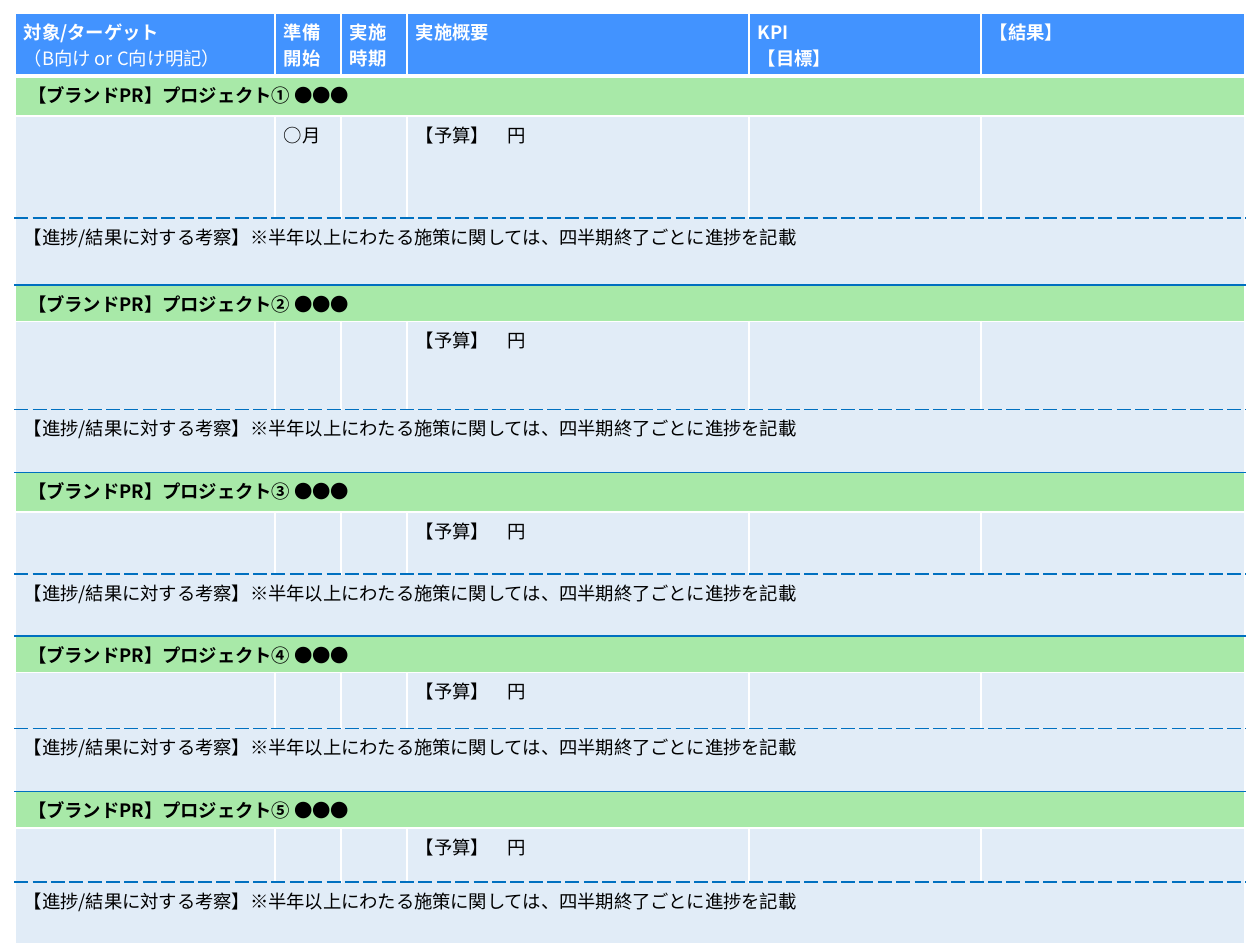
from lxml.etree import SubElement
from pptx import Presentation
from pptx.dml.color import RGBColor
from pptx.oxml.ns import qn
from pptx.util import Pt

PX = 914400 // 126
FONT, SIZE = "Noto Sans CJK JP", Pt(10.5)
COLORS = {"header": "016EFF", "title": "6FDB6F", "body": "DEEBF7",
          "white": "FFFFFF", "black": "000000", "rule": "0070C0"}
OPACITY = {"header": 74, "title": 60, "body": 90}

# Each header line is (text, bold)
HEADERS = [
    [("対象/ターゲット", True), ("（B向け or C向け明記）", False)],
    [("準備", True), ("開始", True)],
    [("実施", True), ("時期", True)],
    [("実施概要", True)],
    [("KPI", True), ("【目標】", True)],
    [("【結果】", True)],
]
# Number, preparation month, heights of the title, detail and review rows
PROJECTS = [
    ("①", "○月", (40, 102, 67)),
    ("②", "", (36, 88, 63)),
    ("③", "", (40, 62, 62)),
    ("④", "", (36, 56, 63)),
    ("⑤", "", (35, 54, 62)),
]
BUDGET = "【予算】\u3000円"
REVIEW = "【進捗/結果に対する考察】※半年以上にわたる施策に関しては、四半期終了ごとに進捗を記載"
LEFT, TOP, HEADER_HEIGHT = 15, 13, 62
COLUMN_WIDTHS = [260, 66, 66, 342, 232, 264]

# Borders are (colour, points, dash)
WHITE = ("white", 1, "solid")
THICK = ("white", 3, "solid")
RULE = ("rule", 1, "solid")
DASHED = ("rule", 1, "lgDash")


def set_borders(cell, top, bottom):
    properties = cell._tc.get_or_add_tcPr()
    sides = {"L": WHITE, "R": WHITE, "T": top, "B": bottom}
    for side, (color, points, dash) in sides.items():
        line = SubElement(properties, qn(f"a:ln{side}"), w=str(Pt(points)))
        fill = SubElement(line, qn("a:solidFill"))
        SubElement(fill, qn("a:srgbClr"), val=COLORS[color])
        SubElement(line, qn("a:prstDash"), val=dash)


def set_fill(cell, kind):
    cell.fill.solid()
    cell.fill.fore_color.rgb = RGBColor.from_string(COLORS[kind])
    color = cell._tc.tcPr.find(f".//{qn('a:solidFill')}[last()]/../{qn('a:solidFill')}/{qn('a:srgbClr')}")
    color = cell._tc.tcPr.find(f"{qn('a:solidFill')}/{qn('a:srgbClr')}")
    SubElement(color, qn("a:alpha"), val=str(OPACITY[kind] * 1000))


def write(cell, lines, color):
    frame = cell.text_frame
    for index, (text, bold) in enumerate(lines):
        paragraph = frame.add_paragraph() if index else frame.paragraphs[0]
        if not text:
            SubElement(paragraph._p, qn("a:endParaRPr"), sz=str(int(SIZE.pt * 100)))
            continue
        run = paragraph.add_run()
        run.text = text
        run.font.name, run.font.size, run.font.bold = FONT, SIZE, bold
        run.font.color.rgb = RGBColor.from_string(COLORS[color])
        SubElement(run._r.get_or_add_rPr(), qn("a:ea"), typeface=FONT)


def fill_row(row, kind, contents, top, bottom, color="black"):
    """Style a row and write its cells; a single content spans the row."""
    cells = list(row.cells)
    for cell in cells:
        cell.margin_left = cell.margin_right = 9 * PX
        cell.margin_top = cell.margin_bottom = 5 * PX
        set_borders(cell, top, bottom)
        set_fill(cell, kind)
    if len(contents) == 1:
        cells[0].merge(cells[-1])
    for cell, lines in zip(cells, contents):
        write(cell, lines, color)


def main():
    presentation = Presentation()
    presentation.slide_width, presentation.slide_height = 1260 * PX, 945 * PX
    slide = presentation.slides.add_slide(presentation.slide_layouts[6])

    heights = [HEADER_HEIGHT] + [h for project in PROJECTS for h in project[2]]
    table = slide.shapes.add_table(
        len(heights), len(COLUMN_WIDTHS), LEFT * PX, TOP * PX,
        sum(COLUMN_WIDTHS) * PX, sum(heights) * PX).table
    table.first_row = table.horz_banding = False
    for column, width in zip(table.columns, COLUMN_WIDTHS):
        column.width = width * PX
    for row, height in zip(table.rows, heights):
        row.height = height * PX

    rows = iter(table.rows)
    fill_row(next(rows), "header", HEADERS, WHITE, THICK, "white")
    for index, (number, month, _) in enumerate(PROJECTS):
        title = f" 【ブランドPR】プロジェクト{number} ●●●"
        details = [[(text, False)] for text in ("", month, "", BUDGET, "", "")]
        last = index == len(PROJECTS) - 1
        fill_row(next(rows), "title", [[(title, True)]], RULE if index else THICK, WHITE)
        fill_row(next(rows), "body", details, WHITE, DASHED)
        fill_row(next(rows), "body", [[(REVIEW, False)]], DASHED, WHITE if last else RULE)

    presentation.save("out.pptx")


if __name__ == "__main__":
    main()
